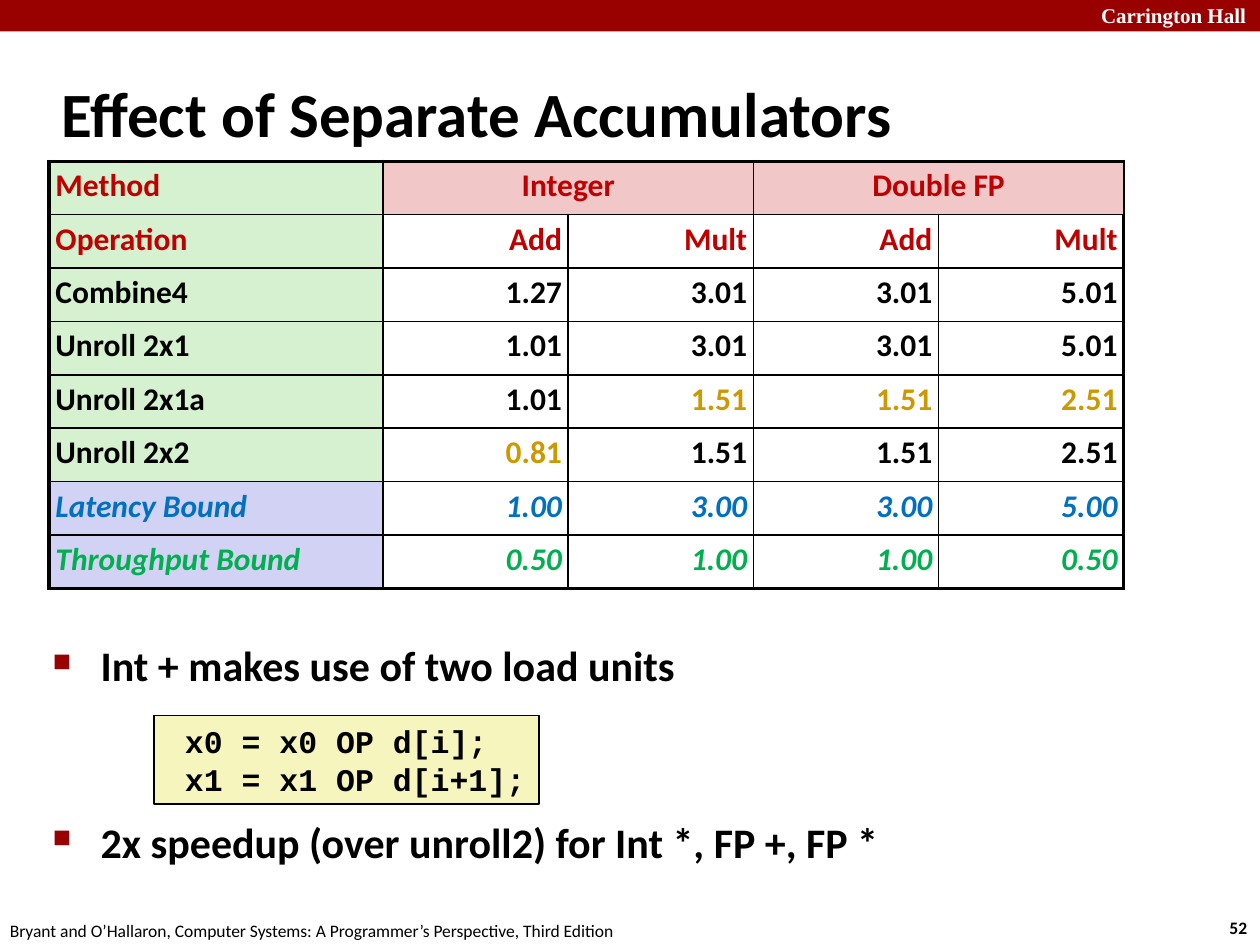
from lxml.etree import SubElement
from pptx import Presentation
from pptx.dml.color import RGBColor
from pptx.enum.shapes import MSO_SHAPE
from pptx.enum.text import MSO_ANCHOR, PP_ALIGN
from pptx.oxml.ns import qn
from pptx.util import Inches, Pt

BLACK = RGBColor(0x00, 0x00, 0x00)
WHITE = RGBColor(0xFF, 0xFF, 0xFF)
MAROON = RGBColor(0x99, 0x00, 0x00)
RED = RGBColor(0xC0, 0x00, 0x00)
GOLD = RGBColor(0xCC, 0x99, 0x00)
BLUE = RGBColor(0x00, 0x70, 0xC0)
GREEN = RGBColor(0x00, 0xB0, 0x50)
PALE_GREEN = RGBColor(0xD5, 0xF1, 0xCF)
PALE_RED = RGBColor(0xF1, 0xC7, 0xC7)
PALE_BLUE = RGBColor(0xD2, 0xD2, 0xF4)
PALE_YELLOW = RGBColor(0xF6, 0xF5, 0xBD)

TITLE = "Effect of Separate Accumulators"
SCHOOL = "Carrington Hall"
PAGE = "52"
SOURCE = "Bryant and O’Hallaron, Computer Systems: A Programmer’s Perspective, Third Edition"
BULLETS = [  # text, points of space before
    ("Int + makes use of two load units", 5),
    ("2x speedup (over unroll2) for Int *, FP +, FP *", 72),
]
CODE = [" x0 = x0 OP d[i];", " x1 = x1 OP d[i+1];"]

ROWS = [
    ("Method", "Integer", "", "Double FP", ""),
    ("Operation", "Add", "Mult", "Add", "Mult"),
    ("Combine4", "1.27", "3.01", "3.01", "5.01"),
    ("Unroll 2x1", "1.01", "3.01", "3.01", "5.01"),
    ("Unroll 2x1a", "1.01", "1.51", "1.51", "2.51"),
    ("Unroll 2x2", "0.81", "1.51", "1.51", "2.51"),
    ("Latency Bound", "1.00", "3.00", "3.00", "5.00"),
    ("Throughput Bound", "0.50", "1.00", "1.00", "0.50"),
]
COL_WIDTHS = [2.65, 1.47, 1.47, 1.47, 1.47]
ROW_COLORS = {0: RED, 1: RED, 6: BLUE, 7: GREEN}
IMPROVED = {(4, 2), (4, 3), (4, 4), (5, 1)}
FIRST_BOUND = 6


def add_run(p, text, size, color=BLACK, font="Calibri", bold=True, italic=False):
    r = p.add_run()
    r.text = text
    f = r.font
    f.name, f.size, f.bold, f.italic = font, Pt(size), bold, italic
    f.color.rgb = color


def add_text(slide, box, text, size, wrap=True, anchor=MSO_ANCHOR.TOP, **style):
    tf = slide.shapes.add_textbox(*map(Inches, box)).text_frame
    tf.word_wrap = wrap
    tf.vertical_anchor = anchor
    add_run(tf.paragraphs[0], text, size, **style)


def add_box(slide, box, fill):
    s = slide.shapes.add_shape(MSO_SHAPE.RECTANGLE, *map(Inches, box))
    s.shadow.inherit = False
    s.fill.solid()
    s.fill.fore_color.rgb = fill
    s.line.fill.background()
    return s


def set_bullet(p):
    pPr = p._p.get_or_add_pPr()
    pPr.set("marL", str(Inches(0.38)))
    pPr.set("indent", str(-Inches(0.38)))
    color = SubElement(pPr, qn("a:buClr"))
    SubElement(color, qn("a:srgbClr"), val=str(MAROON))
    SubElement(pPr, qn("a:buSzPct"), val="60000")
    SubElement(pPr, qn("a:buChar"), char="■")


def set_borders(cell, widths):
    """Draw black left, right, top and bottom borders of the given point widths."""
    tcPr = cell._tc.get_or_add_tcPr()
    for i, (side, width) in enumerate(zip("LRTB", widths)):
        ln = tcPr.makeelement(qn(f"a:ln{side}"), {"w": str(Pt(width))})
        fill = SubElement(ln, qn("a:solidFill"))
        SubElement(fill, qn("a:srgbClr"), val=str(BLACK))
        tcPr.insert(i, ln)


def cell_fill(row, col):
    if col == 0:
        return PALE_BLUE if row >= FIRST_BOUND else PALE_GREEN
    return PALE_RED if row == 0 else WHITE


def add_results(slide):
    n_rows, n_cols = len(ROWS), len(COL_WIDTHS)
    table = slide.shapes.add_table(
        n_rows, n_cols, Inches(0.39), Inches(1.28),
        Inches(sum(COL_WIDTHS)), Inches(3.39)).table
    for column, width in zip(table.columns, COL_WIDTHS):
        column.width = Inches(width)
    for col in (1, 3):
        table.cell(0, col).merge(table.cell(0, col + 1))
    for row, texts in enumerate(ROWS):
        for col, text in enumerate(texts):
            cell = table.cell(row, col)
            cell.fill.solid()
            cell.fill.fore_color.rgb = cell_fill(row, col)
            outer = (col == 0, col == n_cols - 1, row == 0, row == n_rows - 1)
            set_borders(cell, [2.25 if edge else 1 for edge in outer])
            cell.margin_left = cell.margin_right = Inches(0.05)
            cell.margin_top = cell.margin_bottom = Inches(0.05)
            if not text:
                continue
            p = cell.text_frame.paragraphs[0]
            p.line_spacing = 0.95
            if col:
                p.alignment = PP_ALIGN.RIGHT if row else PP_ALIGN.CENTER
            color = GOLD if (row, col) in IMPROVED else ROW_COLORS.get(row, BLACK)
            add_run(p, text, 18, color, italic=row >= FIRST_BOUND)


def add_bullets(slide):
    tf = slide.shapes.add_textbox(*map(Inches, (0.32, 5.03, 9.09, 2.05))).text_frame
    tf.word_wrap = True
    for i, (text, before) in enumerate(BULLETS):
        p = tf.add_paragraph() if i else tf.paragraphs[0]
        p.space_before = Pt(before)
        set_bullet(p)
        add_run(p, text, 24)


def add_code(slide):
    s = add_box(slide, (1.22, 5.68, 3.06, 0.7), PALE_YELLOW)
    s.line.color.rgb = BLACK
    s.line.width = Pt(1)
    tf = s.text_frame
    tf.word_wrap = False
    tf.vertical_anchor = MSO_ANCHOR.TOP
    for i, text in enumerate(CODE):
        p = tf.add_paragraph() if i else tf.paragraphs[0]
        p.alignment = PP_ALIGN.LEFT
        add_run(p, text, 18, font="Courier New")


def main():
    prs = Presentation()
    prs.slide_width, prs.slide_height = Inches(10), Inches(7.5)
    slide = prs.slides.add_slide(prs.slide_layouts[6])
    add_box(slide, (0, 0, 10, 0.25), MAROON)
    add_text(slide, (8.64, -0.03, 1.43, 0.3), SCHOOL, 12,
             color=WHITE, font="Times New Roman")
    add_text(slide, (9.66, 7.23, 0.37, 0.27), PAGE, 10, wrap=False)
    add_text(slide, (-0.02, 7.25, 5.08, 0.27), SOURCE, 10, wrap=False, bold=False)
    add_text(slide, (0.39, 0.48, 8.3, 0.83), TITLE, 36, anchor=MSO_ANCHOR.MIDDLE)
    add_bullets(slide)
    add_code(slide)
    add_results(slide)
    prs.save("out.pptx")


if __name__ == "__main__":
    main()
